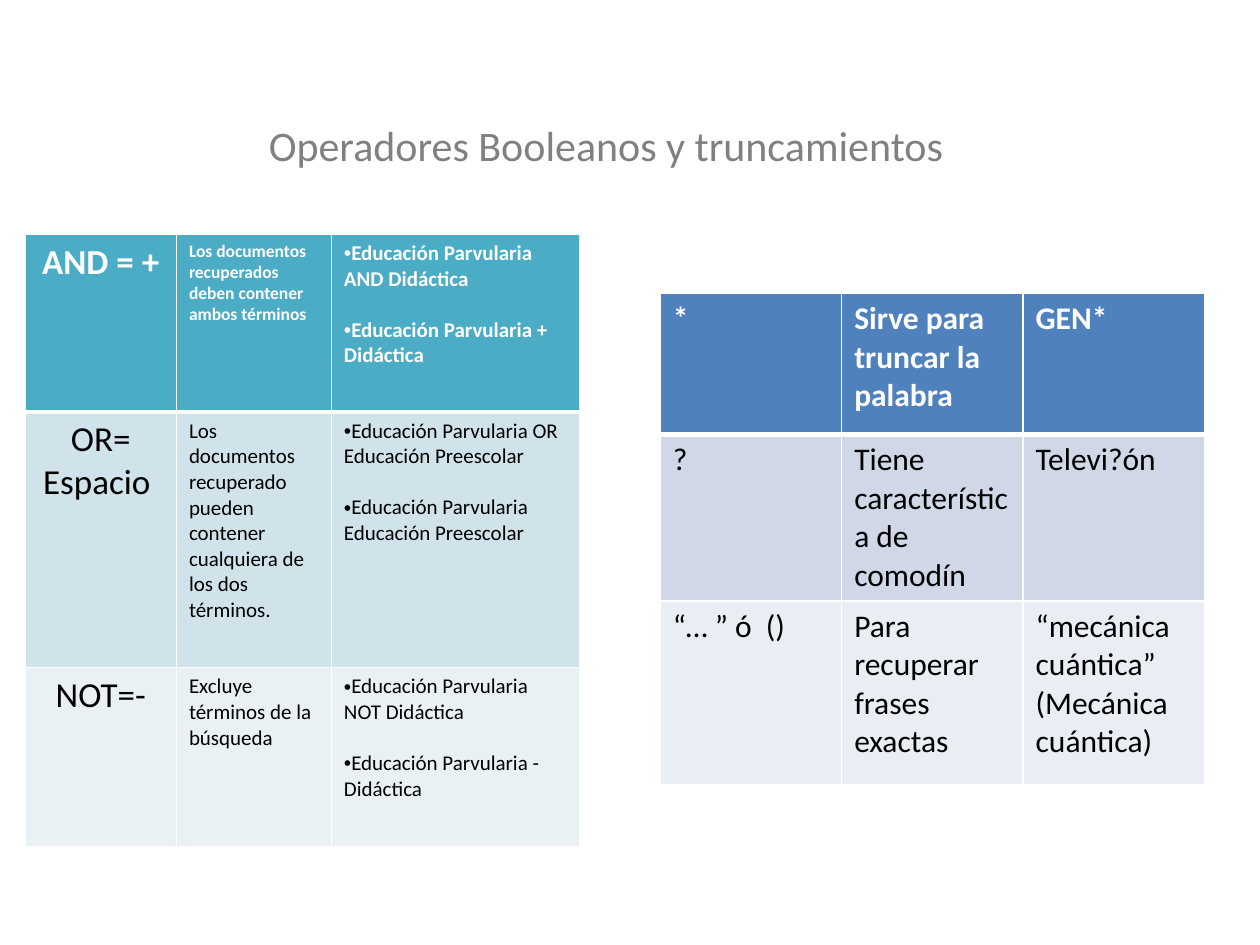
from lxml.etree import SubElement
from pptx import Presentation
from pptx.dml.color import RGBColor
from pptx.enum.text import MSO_ANCHOR as Anchor, PP_ALIGN as Align
from pptx.oxml.ns import qn
from pptx.util import Inches, Pt


def color(value):
    return RGBColor.from_string(value)


class SlideBuilder:
    font = "Calibri"
    white = "FFFFFF"
    black = "000000"
    gray = "808080"

    def __init__(self, presentation):
        self.slide = presentation.slides.add_slide(presentation.slide_layouts[5])

    def add_run(self, paragraph, text, size, fill, bold=False):
        run = paragraph.add_run()
        run.text = text
        run.font.name = self.font
        run.font.size = Pt(size)
        run.font.bold = bold
        run.font.color.rgb = color(fill)

    def title(self, text, left, top, width, height):
        shape = self.slide.shapes.title
        shape.left, shape.top = Inches(left), Inches(top)
        shape.width, shape.height = Inches(width), Inches(height)
        frame = shape.text_frame
        frame.word_wrap = True
        frame.vertical_anchor = Anchor.MIDDLE
        frame.margin_right = Inches(0.25)
        paragraph = frame.paragraphs[0]
        paragraph.alignment = Align.CENTER
        self.add_run(paragraph, text, 24, self.gray)

    def bullet(self, paragraph):
        properties = paragraph._p.get_or_add_pPr()
        properties.set("marL", "0")
        properties.set("indent", "0")
        SubElement(properties, qn("a:buFont"), typeface="Arial")
        SubElement(properties, qn("a:buChar"), char="•")

    def borders(self, cell, row):
        properties = cell._tc.get_or_add_tcPr()
        for side in "LRTB":
            thick = (row, side) in ((0, "B"), (1, "T"))
            line = SubElement(properties, qn(f"a:ln{side}"), w=str(Pt(3 if thick else 1)))
            fill = SubElement(line, qn("a:solidFill"))
            SubElement(fill, qn("a:srgbClr"), val=self.white)

    def table(self, left, top, widths, heights, fills, rows, sizes, centered=(), bulleted=()):
        shape = self.slide.shapes.add_table(
            len(heights), len(widths), Inches(left), Inches(top),
            Inches(sum(widths)), Inches(sum(heights)))
        table = shape.table
        for column, width in zip(table.columns, widths):
            column.width = Inches(width)
        for row, height in zip(table.rows, heights):
            row.height = Inches(height)
        for r, texts in enumerate(rows):
            for c, lines in enumerate(texts):
                cell = table.cell(r, c)
                self.borders(cell, r)
                cell.fill.solid()
                cell.fill.fore_color.rgb = color(fills[r])
                for number, text in enumerate(lines):
                    frame = cell.text_frame
                    paragraph = frame.add_paragraph() if number else frame.paragraphs[0]
                    if c in centered:
                        paragraph.alignment = Align.CENTER
                    if c in bulleted:
                        if number:
                            paragraph.space_before = Pt(14.6)
                        self.bullet(paragraph)
                    header = r == 0
                    self.add_run(paragraph, text, sizes[r][c],
                                 self.white if header else self.black, header)


def main():
    presentation = Presentation()
    presentation.slide_width = Inches(10)
    presentation.slide_height = Inches(7.5)
    builder = SlideBuilder(presentation)
    builder.title("Operadores Booleanos y truncamientos", 0.12, 0.52, 9.53, 1.25)

    operators = [
        [["AND = +"],
         ["Los documentos recuperados deben contener ambos términos"],
         ["Educación Parvularia AND Didáctica", "Educación Parvularia + Didáctica"]],
        [["OR= Espacio "],
         ["Los documentos recuperado pueden contener cualquiera de los dos términos."],
         ["Educación Parvularia OR Educación Preescolar",
          "Educación Parvularia Educación Preescolar"]],
        [["NOT=-"],
         ["Excluye términos de la búsqueda"],
         ["Educación Parvularia NOT Didáctica", "Educación Parvularia - Didáctica"]],
    ]
    builder.table(0.2, 1.86, [1.2, 1.23, 1.97], [1.41, 2.03, 1.42],
                  ["4BACC6", "D0E3EA", "E9F1F5"], operators,
                  [[20, 10, 12], [20, 12, 12], [20, 12, 12]],
                  centered=(0,), bulleted=(2,))

    truncations = [
        [["*"], ["Sirve para truncar la palabra"], ["GEN*"]],
        [["?"], ["Tiene característica de comodín"], ["Televi?ón"]],
        [["“… ” ó  ()"], ["Para recuperar frases exactas"],
         ["“mecánica cuántica”", "(Mecánica cuántica)"]],
    ]
    builder.table(5.24, 2.33, [1.44] * 3, [1.12, 1.32, 1.46],
                  ["4F81BD", "D0D8E8", "E9EDF4"], truncations, [[18] * 3] * 3)
    presentation.save("out.pptx")


if __name__ == "__main__":
    main()
